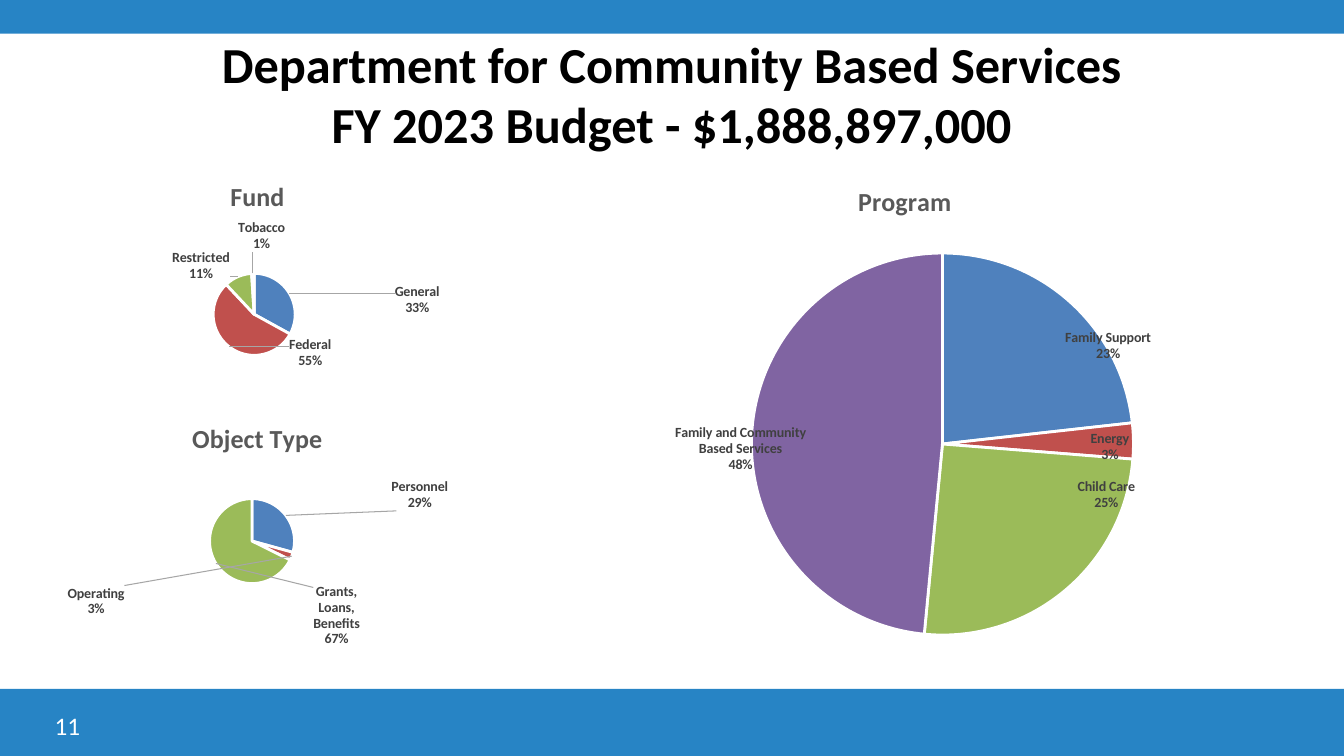
from lxml import etree
from pptx import Presentation
from pptx import util as u
from pptx.chart import data as chart_data
from pptx.dml import color
from pptx.enum import chart as chart_enum, shapes, text
from pptx.oxml import ns

FONT = "Calibri"
PERCENT = '0"%"'
COLORS = {
    "band": "2784C5", "title": "000000", "white": "FFFFFF",
    "heading": "595959", "label": "404040", "leader": "A6A6A6",
    "slice0": "4F81BD", "slice1": "C0504D", "slice2": "9BBB59", "slice3": "8064A2",
}

CHARTS = [
    {
        "name": "Fund", "box": (48, 116.6, 272.2, 168.5),
        "heading": (113.2, 7.2), "pie": (104.3, 78.7, 58.6),
        "slices": [
            ("General", 33, (71.6, 17.9)),
            ("Federal", 55, (75.7, -10.6)),
            ("Restricted", 11, (-4.1, 7.1)),
            ("Tobacco", 1, (6.3, -11.3)),
        ],
    },
    {
        "name": "Object Type", "box": (48, 288.7, 272.2, 173.5),
        "heading": (86, 7.8), "pie": (101.8, 67.5, 60.7),
        "slices": [
            ("Personnel", 29, (75.7, -0.7)),
            ("Operating", 3, (-164.1, 19.4)),
            ("Grants, Loans, Benefits", 67, (106.4, 14.9)),
        ],
    },
    {
        "name": "Program", "box": (393.8, 116.6, 505.4, 358.6),
        "heading": (215.8, 11.1), "pie": (143, 64.2, 272.9),
        "slices": [
            ("Family Support", 23, (-6.1, 45.9)),
            ("Energy", 3, (-34.9, 4.3)),
            ("Child Care", 25, (6.1, -82.8)),
            ("Family and Community Based Services", 48, (43, 10)),
        ],
    },
]


def rgb(name):
    return color.RGBColor.from_string(COLORS[name])


def style(font, size, ink, bold=False):
    font.name, font.size, font.bold = FONT, u.Pt(size), bold
    font.color.rgb = rgb(ink)


def points(box):
    return [u.Pt(length) for length in box]


def child(parent, tag, **attributes):
    return etree.SubElement(parent, ns.qn(tag), attributes)


def manual_layout(box, position, size=None, edge=True):
    width, height = box[2:]
    fractions = {"x": position[0] / width, "y": position[1] / height}
    layout = etree.Element(ns.qn("c:layout"))
    manual = child(layout, "c:manualLayout")
    if size:
        child(manual, "c:layoutTarget", val="inner")
        fractions.update(w=size / width, h=size / height)
    if edge:
        child(manual, "c:xMode", val="edge")
        child(manual, "c:yMode", val="edge")
    for key, value in fractions.items():
        child(manual, f"c:{key}", val=f"{value:.4f}")
    return layout


def replace_layout(parent, layout, after=None):
    for old in parent.findall(ns.qn("c:layout")):
        parent.remove(old)
    before = parent.find(ns.qn(after)) if after else None
    parent.insert(0 if before is None else parent.index(before) + 1, layout)


def add_band(page, box):
    band = page.shapes.add_shape(shapes.MSO_SHAPE.RECTANGLE, *points(box))
    band.shadow.inherit = False
    band.fill.solid()
    band.fill.fore_color.rgb = rgb("band")
    band.line.fill.background()


def add_text(page, box, lines, size, ink, bold, align, anchor):
    frame = page.shapes.add_textbox(*points(box)).text_frame
    frame.word_wrap = True
    frame.vertical_anchor = anchor
    para = frame.paragraphs[0]
    para.alignment = align
    for index, line in enumerate(lines):
        if index:
            para.add_line_break()
        span = para.add_run()
        span.text = line
        style(span.font, size, ink, bold)


def place_label(label, box, offset):
    style(label.font, 10, "label", True)
    label.position = chart_enum.XL_LABEL_POSITION.OUTSIDE_END
    node = label._dLbl
    replace_layout(node, manual_layout(box, offset, edge=False), "c:idx")
    node.insert(2, etree.Element(ns.qn("c:numFmt"), formatCode=PERCENT, sourceLinked="0"))
    node.find(ns.qn("c:showCatName")).set("val", "1")
    child(node, "c:separator").text = "\n"


def add_leader_lines(labels):
    leaders = child(labels._element, "c:leaderLines")
    line = child(child(leaders, "c:spPr"), "a:ln", w=str(u.Pt(0.75)))
    child(child(line, "a:solidFill"), "a:srgbClr", val=COLORS["leader"])


def add_pie(page, name, box, heading, pie, slices):
    values = chart_data.CategoryChartData()
    values.categories = [category for category, value, offset in slices]
    values.add_series(name, [value for category, value, offset in slices])
    frame = page.shapes.add_chart(chart_enum.XL_CHART_TYPE.PIE, *points(box), values)
    chart = frame.chart
    style(chart.font, 10, "title")
    chart.has_legend = False
    chart.has_title = True
    span = chart.chart_title.text_frame.paragraphs[0].add_run()
    span.text = name
    style(span.font, 18.6, "heading", True)
    replace_layout(chart.chart_title._element, manual_layout(box, heading), "c:tx")
    plot = chart.plots[0]
    plot.vary_by_categories = True
    replace_layout(plot._element.getparent(), manual_layout(box, pie[:2], pie[2]))

    series = plot.series[0]
    labels = series.data_labels
    style(labels.font, 10, "label", True)
    labels.number_format = PERCENT
    labels.number_format_is_linked = False
    labels.show_value = True
    labels.show_category_name = True
    add_leader_lines(labels)
    for index, (category, value, offset) in enumerate(slices):
        point = series.points[index]
        point.format.fill.solid()
        point.format.fill.fore_color.rgb = rgb(f"slice{index}")
        point.format.line.color.rgb = rgb("white")
        point.format.line.width = u.Pt(2)
        place_label(point.data_label, box, offset)


def build_budget_page(page, width, height):
    add_band(page, (0, 0, width, 24))
    add_band(page, (0, height - 48, width, 48))
    add_text(page, (48, 21.6, width - 96, 90),
             ["Department for Community Based Services", "FY 2023 Budget - $1,888,897,000"],
             36, "title", True, text.PP_ALIGN.CENTER, text.MSO_ANCHOR.MIDDLE)
    for chart in CHARTS:
        add_pie(page, **chart)
    add_text(page, (32, height - 36, 224, 29), ["11"], 18, "white", False,
             text.PP_ALIGN.LEFT, text.MSO_ANCHOR.TOP)


def main():
    deck = Presentation()
    deck.slide_width, deck.slide_height = u.Pt(960), u.Pt(540)
    page = deck.slides.add_slide(deck.slide_layouts[6])
    build_budget_page(page, 960, 540)
    deck.save("out.pptx")


if __name__ == "__main__":
    main()
